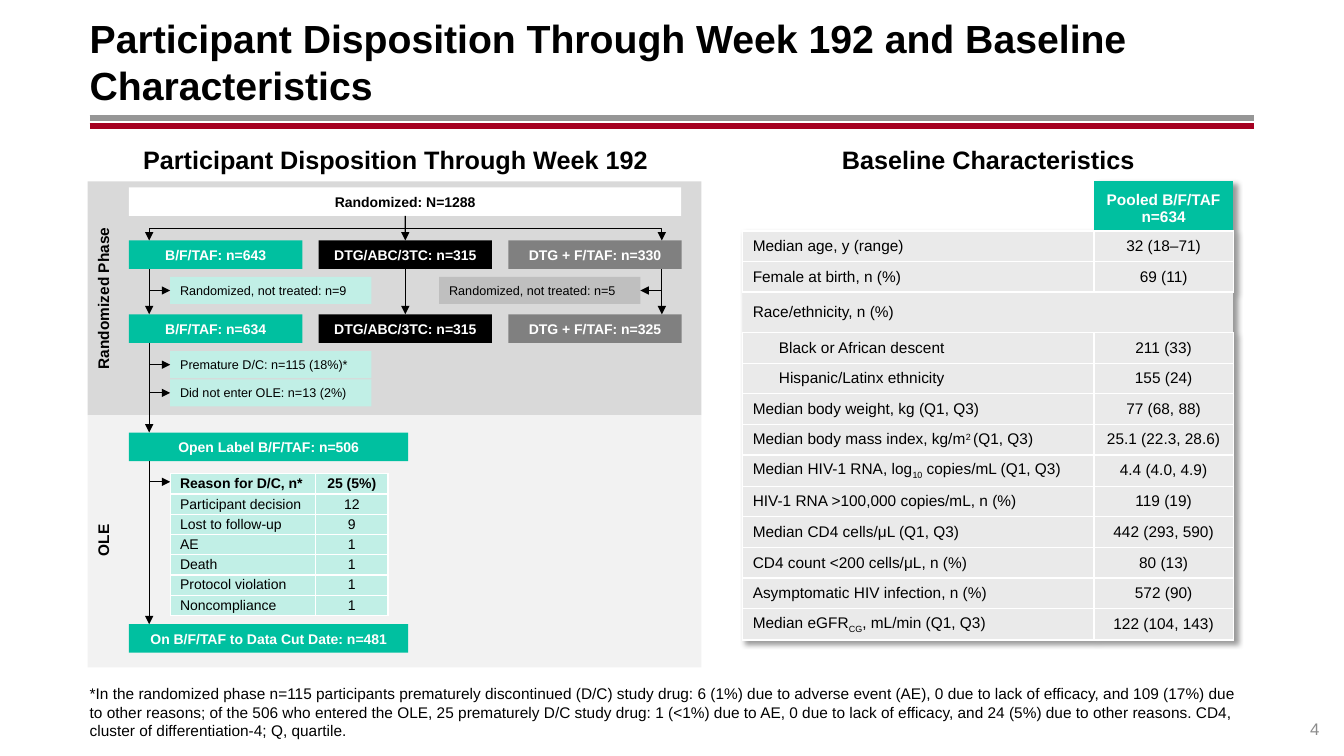
from lxml.etree import SubElement, fromstring
from pptx import Presentation
from pptx.dml.color import RGBColor
from pptx.enum.shapes import MSO_CONNECTOR, MSO_SHAPE
from pptx.enum.text import MSO_ANCHOR, MSO_AUTO_SIZE, PP_ALIGN
from pptx.oxml.ns import nsdecls, qn
from pptx.util import Cm, Pt

TEAL, PALE_TEAL, BLACK, WHITE = "00C0A0", "C1EFE6", "000000", "FFFFFF"
GRAY, LIGHT_GRAY, CELL_GRAY = "808080", "BFBFBF", "EAEAEA"
LEFT, CENTER, RIGHT = PP_ALIGN.LEFT, PP_ALIGN.CENTER, PP_ALIGN.RIGHT
TOP, MIDDLE, BOTTOM = MSO_ANCHOR.TOP, MSO_ANCHOR.MIDDLE, MSO_ANCHOR.BOTTOM
NO_STYLE = "{2D5ABB26-0587-4C30-8999-92F81FD0307C}"
# Raised or lowered parts of a label, marked with ~ on both sides
BASELINES = {"2 ": "30000", "10": "-25000", "CG": "-25000"}


def hex_color(value):
    return RGBColor.from_string(value)


def write_text(frame, text, size, color=BLACK, bold=False, alignment=LEFT):
    frame.text = text
    font_format = {"name": "Arial", "size": Pt(size), "bold": bold}
    for paragraph in frame.paragraphs:
        parts = paragraph.text.split("~")
        paragraph.clear()
        paragraph.alignment = alignment
        paragraph.space_before = Pt(0)
        for part in parts:
            run = paragraph.add_run()
            run.text = part
            for name, value in font_format.items():
                setattr(run.font, name, value)
            run.font.color.rgb = hex_color(color)
            if len(parts) > 1 and part in BASELINES:
                run.font._element.set("baseline", BASELINES[part])


presentation = Presentation()
presentation.slide_width, presentation.slide_height = Cm(33.87), Cm(19.05)
slide = presentation.slides.add_slide(presentation.slide_layouts[1])
shapes = slide.shapes
title, footnote = slide.placeholders

# Title, footnote, headings and page number
footnote_text = (
    "*In the randomized phase n=115 participants prematurely discontinued (D/C) study drug: "
    "6 (1%) due to adverse event (AE), 0 due to lack of efficacy, and 109 (17%) due to other "
    "reasons; of the 506 who entered the OLE, 25 prematurely D/C study drug: 1 (<1%) due to AE, "
    "0 due to lack of efficacy, and 24 (5%) due to other reasons. CD4, cluster of "
    "differentiation-4; Q, quartile.")
text_areas = [
    (title, "Participant Disposition Through Week 192 and Baseline Characteristics",
     (2.26, 0.46, 29.34, 2.18), 28, BLACK, True, LEFT, MIDDLE, 0),
    (footnote, footnote_text, (2.26, 17.22, 29.34, 1.42), 11, BLACK, False, LEFT, BOTTOM, 0),
    (None, "Participant Disposition Through Week 192", (2.26, 3.51, 15.42, 1.02),
     18, BLACK, True, CENTER, TOP, 0.13),
    (None, "Baseline Characteristics", (18.72, 3.51, 12.37, 1.02),
     18, BLACK, True, CENTER, TOP, 0.13),
    (None, "4", (31.6, 17.6, 1.65, 1.02), 12, "8C8C8C", False, RIGHT, BOTTOM, 0),
]
for area, text, box, size, color, bold, alignment, anchor, margin in text_areas:
    left, top, width, height = map(Cm, box)
    area = area or shapes.add_textbox(left, top, width, height)
    frame = area.text_frame
    write_text(frame, text, size, color, bold, alignment)
    area_format = {"left": left, "top": top, "width": width, "height": height}
    frame_format = {"word_wrap": True, "auto_size": MSO_AUTO_SIZE.NONE,
                    "vertical_anchor": anchor, "margin_left": 0, "margin_right": 0,
                    "margin_top": Cm(margin), "margin_bottom": Cm(margin)}
    for target, values in ((area, area_format), (frame, frame_format)):
        for name, value in values.items():
            setattr(target, name, value)
footnote_properties = footnote.text_frame.paragraphs[0]._p.get_or_add_pPr()
footnote_properties.set("marL", "0")
footnote_properties.set("indent", "0")
SubElement(footnote_properties, qn("a:buNone"))

# Flow chart grid: three arms, two rows of counts, three vertical paths
arm_lefts = [3.25 + 4.78 * arm for arm in range(3)]
arm_width, box_height, note_width, note_height = 4.37, 0.72, 5.07, 0.68
start_top, assigned_top, treated_top, open_label_top, cutoff_top = 4.72, 6.06, 7.92, 10.9, 15.73
left_path, middle_path, right_path = 3.76, 10.21, 16.68
arms = [("B/F/TAF", TEAL, 643, 634), ("DTG/ABC/3TC", BLACK, 315, 315),
        ("DTG + F/TAF", GRAY, 330, 325)]

# Phase panels and boxes: key, text, left, top, width, height, fill
boxes = [
    ("randomized phase", "", 2.21, 4.57, 15.47, 5.89, "D9D9D9"),
    ("open label phase", "", 2.21, 10.46, 15.47, 6.36, "F2F2F2"),
    ("start", "Randomized: N=1288", 3.25, start_top, 13.92, box_height, WHITE),
    ("open label", "Open Label B/F/TAF: n=506", 3.25, open_label_top, 7.04, box_height, TEAL),
    ("cutoff", "On B/F/TAF to Data Cut Date: n=481", 3.25, cutoff_top, 7.04, box_height, TEAL),
]
for (arm, fill, assigned, treated), left in zip(arms, arm_lefts):
    for stage, top, count in (("assigned", assigned_top, assigned),
                              ("treated", treated_top, treated)):
        boxes.append((f"{arm} {stage}", f"{arm}: n={count}", left, top, arm_width, box_height, fill))
notes = [("Randomized, not treated: n=9", 4.29, 6.98, PALE_TEAL),
         ("Randomized, not treated: n=5", 11.07, 6.98, LIGHT_GRAY),
         ("Premature D/C: n=115 (18%)*", 4.29, 8.85, PALE_TEAL),
         ("Did not enter OLE: n=13 (2%)", 4.29, 9.56, PALE_TEAL)]
for text, left, top, fill in notes:
    boxes.append((text, text, left, top, note_width, note_height, fill))

flow = {}
for key, text, left, top, width, height, fill in boxes:
    shape = shapes.add_shape(MSO_SHAPE.RECTANGLE, Cm(left), Cm(top), Cm(width), Cm(height))
    shape.shadow.inherit = False
    shape.fill.solid()
    shape.fill.fore_color.rgb = hex_color(fill)
    shape.line.fill.background()
    flow[key] = shape
    if text:
        is_note = height == note_height
        color = BLACK if is_note or fill == WHITE else WHITE
        write_text(shape.text_frame, text, 9 if is_note else 10, color, not is_note,
                   LEFT if is_note else CENTER)
        shape.text_frame.vertical_anchor = MIDDLE

# Rotated phase names
for text, top in (("Randomized Phase", 7.14), ("OLE", 13.23)):
    phase_name = shapes.add_textbox(Cm(0.41), Cm(top), Cm(4.37), Cm(0.76))
    phase_name.rotation = 270
    phase_name.text_frame.word_wrap = True
    phase_name.text_frame.vertical_anchor = MIDDLE
    write_text(phase_name.text_frame, text, 11, BLACK, True, CENTER)

# Straight lines: from x, y to x, y, joined start and end, color, width
assigned_bottom, treated_bottom = assigned_top + box_height, treated_top + box_height
lines = [
    (2.26, 2.97, 31.6, 2.97, None, None, "969696", 4.25),
    (2.26, 3.18, 31.6, 3.18, None, None, "A50021", 4.25),
    (middle_path, start_top + box_height, middle_path, assigned_top,
     ("start", 2), ("DTG/ABC/3TC assigned", 0), BLACK, 0.75),
    (middle_path, assigned_bottom, middle_path, treated_top,
     ("DTG/ABC/3TC assigned", 2), ("DTG/ABC/3TC treated", 0), BLACK, 0.75),
    (4.29 - 0.53, 12.14, 4.29, 12.14, None, None, BLACK, 0.75),
]
for x, top, bottom in ((left_path, assigned_bottom, treated_top),
                       (right_path, assigned_bottom, treated_top),
                       (left_path, treated_bottom, open_label_top),
                       (left_path, open_label_top + box_height, cutoff_top)):
    lines.append((x, top, x, bottom, None, None, BLACK, 0.75))
for text, left, top, fill in notes:
    y = top + note_height / 2
    path_x, edge, side = ((left_path, left, 1) if fill == PALE_TEAL
                          else (right_path, left + note_width, 3))
    lines.append((path_x, y, edge, y, None, (text, side), BLACK, 0.75))

arrows = []
for x1, y1, x2, y2, start, end, color, width in lines:
    connector = shapes.add_connector(MSO_CONNECTOR.STRAIGHT, Cm(x1), Cm(y1), Cm(x2), Cm(y2))
    if start:
        connector.begin_connect(flow[start[0]], start[1])
    if end:
        connector.end_connect(flow[end[0]], end[1])
    connector.line.color.rgb = hex_color(color)
    connector.line.width = Pt(width)
    SubElement(connector._element.spPr, qn("a:effectLst"))
    if color == BLACK:
        arrows.append(connector)

# Branches from the start box to the outer arms
start_bottom = start_top + box_height
branch_y = (start_bottom + assigned_top) / 2
for x in (left_path, right_path):
    builder = shapes.build_freeform(Cm(middle_path), Cm(start_bottom))
    builder.add_line_segments([(Cm(middle_path), Cm(branch_y)), (Cm(x), Cm(branch_y)),
                               (Cm(x), Cm(assigned_top))], close=False)
    branch = builder.convert_to_shape()
    branch.shadow.inherit = False
    branch.fill.background()
    branch.line.color.rgb = hex_color(BLACK)
    branch.line.width = Pt(0.75)
    arrows.append(branch)
for arrow in arrows:
    SubElement(arrow.line._get_or_add_ln(), qn("a:tailEnd"), type="triangle")

# Tables
reasons = [("Reason for D/C, n*", "25 (5%)"), ("Participant decision", "12"),
           ("Lost to follow-up", "9"), ("AE", "1"), ("Death", "1"),
           ("Protocol violation", "1"), ("Noncompliance", "1")]
baseline = [("", "Pooled B/F/TAF\nn=634"), ("Median age, y (range)", "32 (18–71)"),
            ("Female at birth, n (%)", "69 (11)"), ("Race/ethnicity, n (%)", ""),
            ("Black or African descent", "211 (33)"), ("Hispanic/Latinx ethnicity", "155 (24)"),
            ("Median body weight, kg (Q1, Q3)", "77 (68, 88)"),
            ("Median body mass index, kg/m~2 ~(Q1, Q3)", "25.1 (22.3, 28.6)"),
            ("Median HIV-1 RNA, log~10~ copies/mL (Q1, Q3)", "4.4 (4.0, 4.9)"),
            ("HIV-1 RNA >100,000 copies/mL, n (%)", "119 (19)"),
            ("Median CD4 cells/μL (Q1, Q3)", "442 (293, 590)"),
            ("CD4 count <200 cells/μL, n (%)", "80 (13)"),
            ("Asymptomatic HIV infection, n (%)", "572 (90)"),
            ("Median eGFR~CG~, mL/min (Q1, Q3)", "122 (104, 143)")]
tables = [(reasons, 4.29, 11.94, (3.66, 1.83), 0.51, 0.51, 10, PALE_TEAL, 0),
          (baseline, 18.72, 4.57, (8.85, 3.51), 1.25, 0.77, 11, CELL_GRAY, 0.13)]
for rows, left, top, widths, header_height, row_height, size, fill, margin in tables:
    table = shapes.add_table(len(rows), 2, Cm(left), Cm(top), Cm(sum(widths)),
                             Cm(header_height + row_height * (len(rows) - 1))).table
    properties = table._tbl.tblPr
    properties.find(qn("a:tableStyleId")).text = NO_STYLE
    table.horz_banding = False
    for column, width in zip(table.columns, widths):
        column.width = Cm(width)
    for row_index, row in enumerate(rows):
        table.rows[row_index].height = Cm(row_height if row_index else header_height)
        header = rows is baseline and row_index == 0
        for column_index, text in enumerate(row):
            cell = table.cell(row_index, column_index)
            indent = 0.66 if "descent" in row[0] or "ethnicity" in row[0].split() else 0
            cell_format = {"vertical_anchor": BOTTOM if header else MIDDLE,
                           "margin_left": Cm(0 if header else 0.25 + indent * (column_index == 0)),
                           "margin_right": Cm(0 if header else 0.25),
                           "margin_top": Cm(margin), "margin_bottom": Cm(margin)}
            for name, value in cell_format.items():
                setattr(cell, name, value)
            write_text(cell.text_frame, text, size, WHITE if header else BLACK,
                       row_index == 0, CENTER if column_index else LEFT)
            sides = "" if header else "TB" if "" in row else "LRTB"
            for side in sides:
                border = SubElement(cell._tc.get_or_add_tcPr(), qn(f"a:ln{side}"), w="12700")
                SubElement(SubElement(border, qn("a:solidFill")), qn("a:srgbClr"), val=WHITE)
            if header and not text:
                cell.fill.background()
            else:
                cell.fill.solid()
                cell.fill.fore_color.rgb = hex_color(TEAL if header else fill)

# Soft shadow under the baseline table
properties.insert(0, fromstring(
    f'<a:effectLst {nsdecls("a")}><a:outerShdw blurRad="50800" dist="38100" dir="2700000">'
    '<a:srgbClr val="000000"><a:alpha val="40000"/></a:srgbClr></a:outerShdw></a:effectLst>'))

presentation.save("out.pptx")
